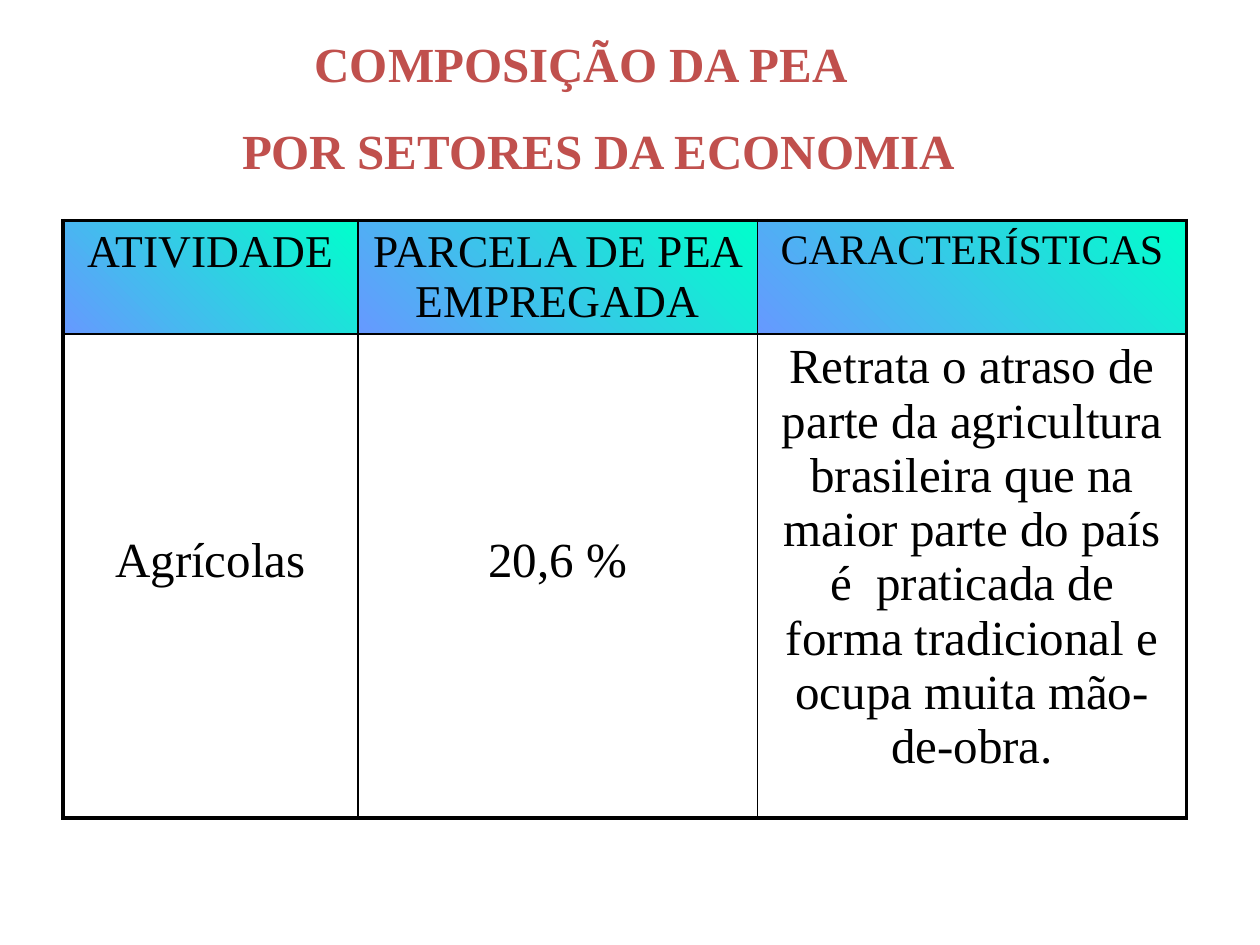
from lxml import etree
from pptx import Presentation, util as u
from pptx.dml.color import RGBColor
from pptx.enum import text
from pptx.oxml.ns import qn

Pt = u.Pt
COLORS = {"title": "C0504D", "ink": "000000", "blue": "6699FF", "green": "00FFCC"}
OUTER, INNER = 2.25, 1


class SlideBuilder:
    font_name = "Times New Roman"

    def __init__(self, slide):
        self.slide = slide

    def style(self, paragraph, size, color, bold=False):
        for run in paragraph.runs:
            run.font.name = self.font_name
            run.font.size = Pt(size)
            run.font.bold = bold
            run.font.color.rgb = RGBColor.from_string(COLORS[color])

    def title(self, lines, left, top, width, height):
        """Bold heading; each line comes with its own left indent."""
        heading = self.slide.shapes.add_textbox(
            Pt(left), Pt(top), Pt(width), Pt(height)).text_frame
        heading.word_wrap = True
        heading.margin_top = Pt(7)
        heading.text = "\n".join(line for line, _ in lines)
        for index, (_, indent) in enumerate(lines):
            paragraph = heading.paragraphs[index]
            paragraph._p.get_or_add_pPr().set("marL", str(Pt(indent)))
            paragraph.space_before = Pt(16 if index else 0)
            self.style(paragraph, 28, "title", bold=True)

    def borders(self, cell, widths):
        properties = cell._tc.get_or_add_tcPr()
        for index, (side, width) in enumerate(widths.items()):
            line = etree.Element(qn(f"a:ln{side}"), w=str(Pt(width)))
            fill = etree.SubElement(line, qn("a:solidFill"))
            etree.SubElement(fill, qn("a:srgbClr"), val=COLORS["ink"])
            properties.insert(index, line)

    def gradient(self, cell):
        cell.fill.gradient()
        cell.fill.gradient_angle = 45
        for stop, color in zip(cell.fill.gradient_stops, ("blue", "green")):
            stop.color.rgb = RGBColor.from_string(COLORS[color])

    def table(self, rows, left, top, widths, heights):
        """Each cell is (wording, text size, top margin); the first row is the header."""
        table = self.slide.shapes.add_table(
            len(rows), len(widths), Pt(left), Pt(top),
            Pt(sum(widths)), Pt(sum(heights))).table
        table.first_row = table.horz_banding = False
        for column, width in zip(table.columns, widths):
            column.width = Pt(width)
        last_row, last_column = len(rows) - 1, len(widths) - 1
        for r, row in enumerate(rows):
            table.rows[r].height = Pt(heights[r])
            for c, (wording, size, margin) in enumerate(row):
                cell = table.cell(r, c)
                cell.text_frame.text = wording
                cell.margin_top = Pt(margin)
                paragraph = cell.text_frame.paragraphs[0]
                paragraph.alignment = text.PP_ALIGN.CENTER
                self.style(paragraph, size, "ink")
                if r == 0:
                    self.gradient(cell)
                else:
                    cell.fill.background()
                self.borders(cell, {
                    "L": OUTER if c == 0 else INNER,
                    "R": OUTER if c == last_column else INNER,
                    "T": OUTER if r == 0 else INNER,
                    "B": OUTER if r == last_row else INNER,
                })


def main():
    deck = Presentation()
    deck.slide_width, deck.slide_height = Pt(720), Pt(540)
    builder = SlideBuilder(deck.slides.add_slide(deck.slide_layouts[6]))

    # Employment by sector
    header = [("ATIVIDADE", 26, 3.6),
              ("PARCELA DE PEA EMPREGADA", 26, 3.6),
              ("CARACTERÍSTICAS", 24, 3.6)]
    farming = [("Agrícolas", 28, 114),
               ("20,6 %", 28, 114),
               ("Retrata o atraso de parte da agricultura brasileira que na maior "
                "parte do país é  praticada de forma tradicional e ocupa muita "
                "mão-de-obra.", 28, 3.6)]
    builder.table([header, farming], 36, 126, [168.5, 228.5, 245], [64.5, 276.5])

    # Heading
    builder.title([("COMPOSIÇÃO DA PEA", 160.5), ("POR SETORES DA ECONOMIA", 119)],
                  12.24, 12.24, 707.76, 91.5)

    deck.save("out.pptx")


if __name__ == "__main__":
    main()
